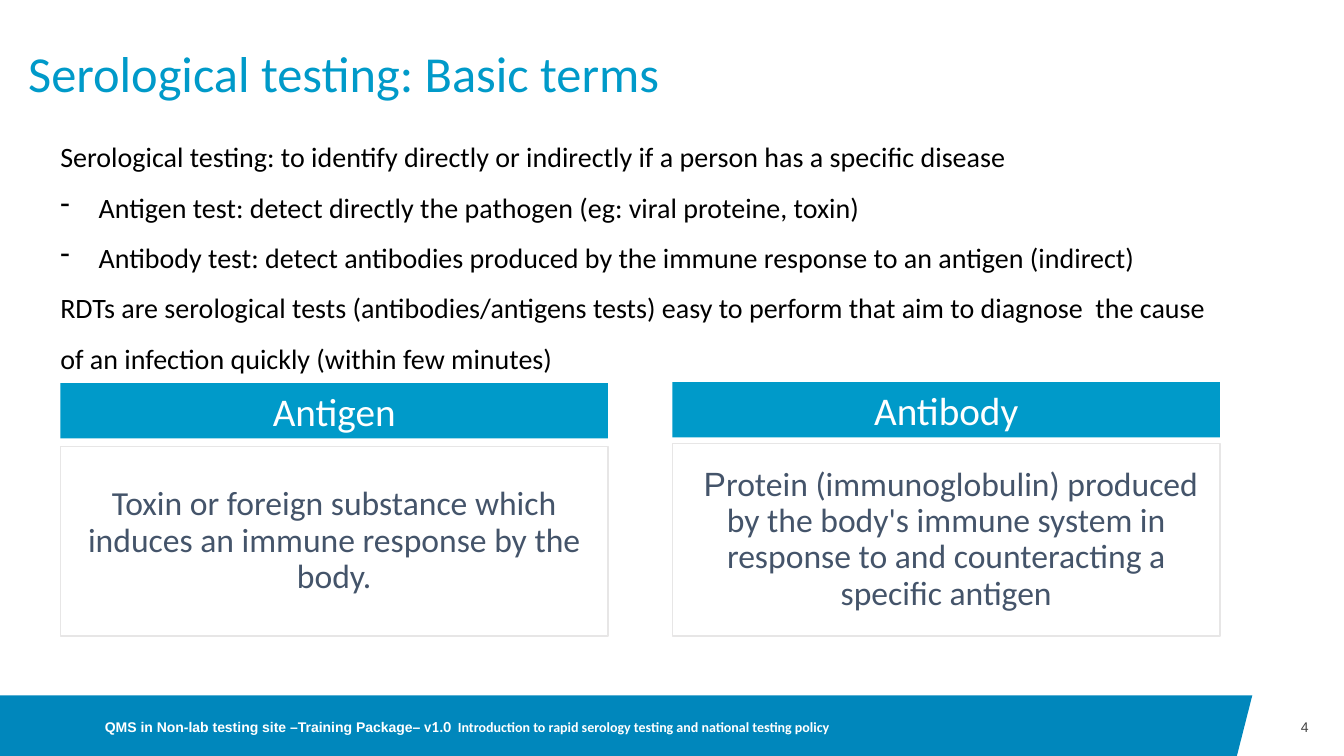
from lxml import etree
from pptx import Presentation
from pptx.dml.color import RGBColor
from pptx.enum.shapes import MSO_SHAPE as Preset
from pptx.enum.text import MSO_ANCHOR as Anchor, PP_ALIGN as Align
from pptx.oxml.ns import qn
from pptx.util import Inches, Pt

# Colours
BLUE = RGBColor(0x00, 0x9A, 0xC9)
FOOTER_BLUE = RGBColor(0x00, 0x87, 0xBC)
SLATE = RGBColor(0x44, 0x54, 0x6A)
PALE_GREY = RGBColor(0xE7, 0xE6, 0xE6)
DARK_GREY = RGBColor(0x42, 0x42, 0x42)
WHITE = RGBColor(0xFF, 0xFF, 0xFF)
BLACK = RGBColor(0, 0, 0)

# Content: a paragraph is a list of (text, font, size) runs
TITLE = "Serological testing: Basic terms"
PAGE_NUMBER = "4"
INTRO = [  # (text, has a dash)
    ("Serological testing: to identify directly or indirectly if a person has a specific disease", False),
    ("Antigen test: detect directly the pathogen (eg: viral proteine, toxin)", True),
    ("Antibody test: detect antibodies produced by the immune response to an antigen (indirect)", True),
    ("RDTs are serological tests (antibodies/antigens tests) easy to perform that aim to diagnose  the cause "
     "of an infection quickly (within few minutes)", False),
]
TERMS = [  # heading, heading top, definition top, definition runs
    ("Antigen", 3.8, 4.43, [
        ("Toxin or foreign substance which induces an immune response by the body.", "Calibri", 24)]),
    ("Antibody", 3.79, 4.4, [
        (" P", "Arial", 24),
        ("rotein (immunoglobulin) produced by the body's immune system in response to "
         "and counteracting a specific antigen", "Calibri", 24)]),
]
FOOTER = [
    ("QMS in Non-lab testing site –Training Package– ", "Arial", 10),
    ("v1.0 ", "Calibri", 11),
    (" Introduction to rapid serology testing and national testing policy", "Calibri", 10),
]

# Layout in inches
CARD_LEFT, CARD_STEP, CARD_WIDTH = 0.6, 6.07, 5.43
HEADING_HEIGHT, CARD_BOTTOM = 0.55, 6.31
DASH_INDENT = 0.38
FOOTER_OUTLINE = [(0, 6.9), (12.42, 6.9), (12.26, 7.53), (0, 7.53)]

presentation = Presentation()
presentation.slide_width, presentation.slide_height = Inches(13.33), Inches(7.5)
slide = presentation.slides.add_slide(presentation.slide_layouts[6])


def write(shape, paragraphs, color, align=Align.LEFT, anchor=Anchor.MIDDLE,
          insets=(0, 0), spacing=1.0, bold=False):
    """Fill a shape with paragraphs, each a list of (text, font, size) runs."""
    frame = shape.text_frame
    frame.word_wrap = True
    frame.vertical_anchor = anchor
    frame.margin_left = frame.margin_right = Inches(insets[0])
    frame.margin_top = frame.margin_bottom = Inches(insets[1])
    for index, runs in enumerate(paragraphs):
        paragraph = frame.add_paragraph() if index else frame.paragraphs[0]
        paragraph.alignment = align
        paragraph.line_spacing = spacing
        for text, font, size in runs:
            run = paragraph.add_run()
            run.text = text
            run.font.name, run.font.size = font, Pt(size)
            run.font.bold = bold
            run.font.color.rgb = color
    return frame


def add_text(left, top, width, height, paragraphs, color, **style):
    box = slide.shapes.add_textbox(Inches(left), Inches(top), Inches(width), Inches(height))
    return write(box, paragraphs, color, **style)


def paint(shape, fill, line=None):
    shape.shadow.inherit = False
    shape.fill.solid()
    shape.fill.fore_color.rgb = fill
    if line is None:
        shape.line.fill.background()
    else:
        shape.line.color.rgb = line
        shape.line.width = Pt(1)


def add_panel(left, top, height, fill, line=None):
    panel = slide.shapes.add_shape(Preset.RECTANGLE, Inches(left), Inches(top),
                                   Inches(CARD_WIDTH), Inches(height))
    paint(panel, fill, line)
    return panel


def add_dash(paragraph):
    properties = paragraph._p.get_or_add_pPr()
    properties.set("marL", str(Inches(DASH_INDENT)))
    properties.set("indent", str(-Inches(DASH_INDENT)))
    etree.SubElement(properties, qn("a:buChar")).set("char", "-")


# Footer band
start, *corners = [(Inches(x), Inches(y)) for x, y in FOOTER_OUTLINE]
builder = slide.shapes.build_freeform(*start)
builder.add_line_segments(corners, close=True)
paint(builder.convert_to_shape(), FOOTER_BLUE)

# Title and page number
add_text(0.28, 0, 11.5, 1.03, [[(TITLE, "Calibri", 36)]], BLUE, anchor=Anchor.BOTTOM, spacing=0.9)
add_text(12.42, 6.9, 0.56, 0.63, [[(PAGE_NUMBER, "Arial", 10)]], DARK_GREY, align=Align.RIGHT)

# Term cards
for column, (heading, heading_top, definition_top, definition) in enumerate(TERMS):
    left = CARD_LEFT + column * CARD_STEP
    body = add_panel(left, definition_top, CARD_BOTTOM - definition_top, WHITE, PALE_GREY)
    write(body, [definition], SLATE, align=Align.CENTER, insets=(0.1, 0.1), spacing=0.9)
    header = add_panel(left, heading_top, HEADING_HEIGHT, BLUE)
    write(header, [[(heading, "Calibri", 28)]], WHITE, align=Align.CENTER, insets=(0.1, 0.1))

# Introduction
intro = add_text(0.5, 1.17, 11.84, 2.57, [[(text, "Calibri", 20)] for text, _ in INTRO], BLACK,
                 anchor=Anchor.TOP, insets=(0.1, 0.05), spacing=1.5)
for paragraph, (_, dashed) in zip(intro.paragraphs, INTRO):
    if dashed:
        add_dash(paragraph)

# Footer text
add_text(1.04, 6.91, 8.52, 0.6, [FOOTER], WHITE, bold=True)

presentation.save("out.pptx")
